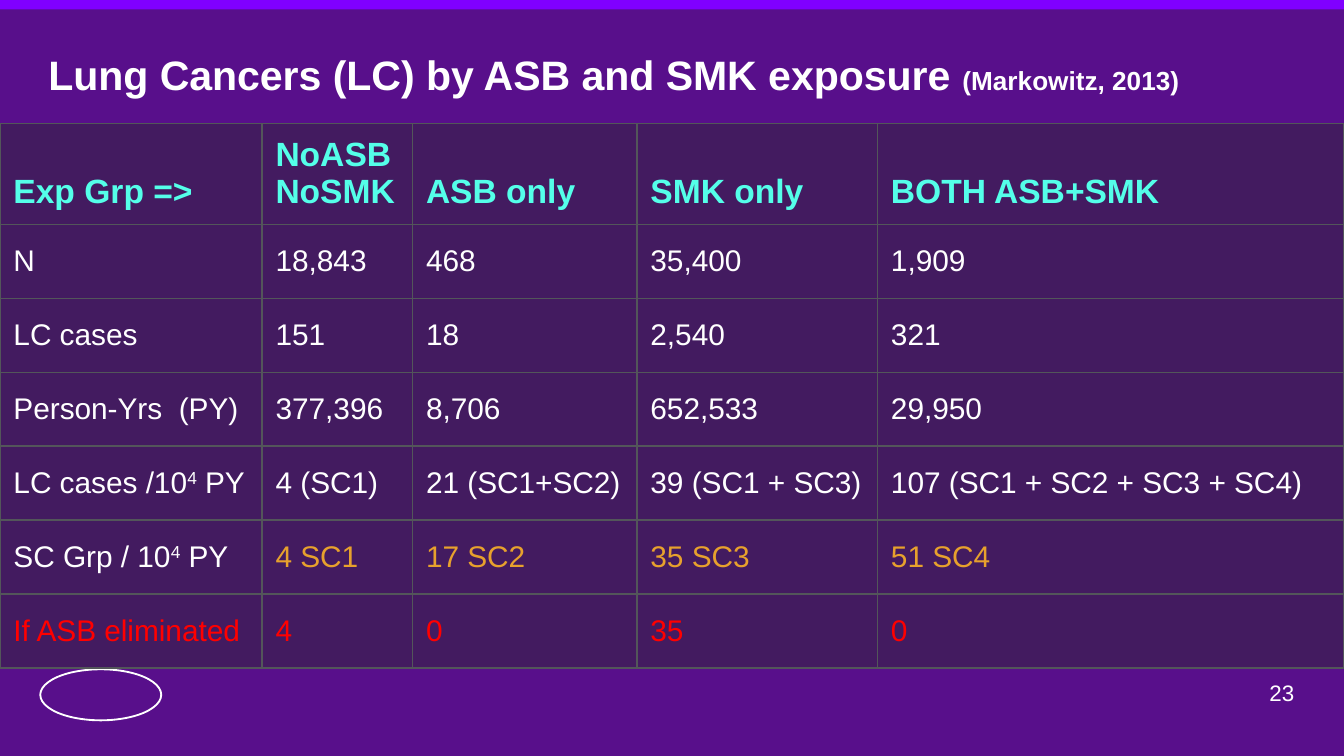
import pptx
import pptx.dml.color
import pptx.enum.shapes
import pptx.enum.text
import pptx.oxml.ns
import pptx.util
from lxml import etree

Inches, Pt = pptx.util.Inches, pptx.util.Pt
RGBColor = pptx.dml.color.RGBColor
Anchor = pptx.enum.text.MSO_ANCHOR
Align = pptx.enum.text.PP_ALIGN
Shape = pptx.enum.shapes.MSO_SHAPE
qn = pptx.oxml.ns.qn

PURPLE = RGBColor(0x58, 0x0F, 0x8B)
VIOLET = RGBColor(0x80, 0x00, 0xFF)
WHITE = RGBColor(0xFF, 0xFF, 0xFF)
AQUA = RGBColor(0x54, 0xFF, 0xE9)
AMBER = RGBColor(0xE7, 0xA1, 0x2D)
RED = RGBColor(0xFF, 0x00, 0x00)
CHARCOAL = RGBColor(0x2A, 0x2B, 0x2D)
GREY = RGBColor(0x53, 0x56, 0x5A)

COLUMNS = [1.95, 1.12, 1.67, 1.79, 3.47]
ROW_HEIGHT = 0.55  # the header row grows to hold its two lines
TABLE_HEIGHT = 4.04
ROWS = [
    ["Exp Grp =>", "NoASB\nNoSMK", "ASB only", "SMK only", "BOTH ASB+SMK"],
    ["N", "18,843", "468", "35,400", "1,909"],
    ["LC cases", "151", "18", "2,540", "321"],
    ["Person-Yrs  (PY)", "377,396", "8,706", "652,533", "29,950"],
    ["LC cases /10^4^ PY", "4 (SC1)", "21 (SC1+SC2)", "39 (SC1 + SC3)",
     "107 (SC1 + SC2 + SC3 + SC4)"],
    ["SC Grp / 10^4^ PY", "4 SC1", "17 SC2", "35 SC3", "51 SC4"],
    ["If ASB eliminated", "4", "0", "35", "0"],
]
SC_ROW, ELIMINATED_ROW = 5, 6


def write(para, text, size=16, color=WHITE, bold=False, align=Align.LEFT):
    """Append text to a paragraph; parts between ^ marks are superscript."""
    para.alignment = align
    for index, part in enumerate(text.split("^")):
        span = para.add_run()
        span.text = part
        span.font.name = "Arial"
        span.font.size = Pt(size)
        span.font.bold = bold
        span.font.color.rgb = color
        if index % 2:
            span.font._element.set("baseline", "30000")


def add_box(left, top, width, height, anchor):
    """Add a text box without insets and return its first paragraph."""
    box = page.shapes.add_textbox(Inches(left), Inches(top), Inches(width), Inches(height))
    frame = box.text_frame
    frame.word_wrap = True
    frame.vertical_anchor = anchor
    frame.margin_left = frame.margin_right = frame.margin_top = frame.margin_bottom = 0
    return frame.paragraphs[0]


deck = pptx.Presentation()
deck.slide_width = Inches(10)
deck.slide_height = deck.slide_width * 9 // 16
page = deck.slides.add_slide(deck.slide_layouts[6])
page.background.fill.solid()
page.background.fill.fore_color.rgb = PURPLE

top_bar = page.shapes.add_shape(Shape.RECTANGLE, 0, 0, deck.slide_width, Inches(0.07))
top_bar.shadow.inherit = False
top_bar.fill.solid()
top_bar.fill.fore_color.rgb = VIOLET
top_bar.line.fill.background()

# Plain mark where the institution's emblem would stand
emblem = page.shapes.add_shape(Shape.OVAL, Inches(0.3), Inches(4.98), Inches(0.9), Inches(0.38))
emblem.shadow.inherit = False
emblem.fill.background()
emblem.line.color.rgb = WHITE
emblem.line.width = Pt(1)

title = add_box(0.36, 0.37, 8.98, 0.45, Anchor.TOP)
write(title, "Lung Cancers (LC) by ASB and SMK exposure ", size=22, bold=True)
write(title, "(Markowitz, 2013)", size=14, bold=True)
write(add_box(9.32, 5.08, 0.31, 0.15, Anchor.MIDDLE), "23", size=12, align=Align.RIGHT)

table_frame = page.shapes.add_table(len(ROWS), len(COLUMNS), 0, Inches(0.92),
                                    deck.slide_width, Inches(TABLE_HEIGHT))
table = table_frame.table
table.first_row = table.horz_banding = False
for column, width in zip(table.columns, COLUMNS):
    column.width = Inches(width)

for r, texts in enumerate(ROWS):
    header = r == 0
    table.rows[r].height = Inches(ROW_HEIGHT)
    for c, text in enumerate(texts):
        cell = table.cell(r, c)
        cell.vertical_anchor = Anchor.BOTTOM if header else Anchor.MIDDLE
        cell.margin_left = cell.margin_right = Inches(0.1)
        cell.margin_top = Inches(0.05)
        cell.margin_bottom = Inches(0.1 if header else 0.05)

        properties = cell._tc.get_or_add_tcPr()
        for side in ("a:lnL", "a:lnR", "a:lnT", "a:lnB"):
            border = etree.SubElement(properties, qn(side), w=str(Pt(1)))
            paint = etree.SubElement(border, qn("a:solidFill"))
            etree.SubElement(paint, qn("a:srgbClr"), val=str(GREY))
        cell.fill.solid()
        cell.fill.fore_color.rgb = CHARCOAL
        tint = properties.find(qn("a:solidFill")).find(qn("a:srgbClr"))
        etree.SubElement(tint, qn("a:alpha"), val="45000")

        if header:
            color = AQUA
        elif r == ELIMINATED_ROW:
            color = RED
        else:
            color = AMBER if r == SC_ROW and c > 0 else WHITE
        frame = cell.text_frame
        for i, line in enumerate(text.split("\n")):
            para = frame.add_paragraph() if i else frame.paragraphs[0]
            write(para, line, size=18 if header else 16, color=color, bold=header)
table_frame.height = Inches(TABLE_HEIGHT)

deck.save("out.pptx")
